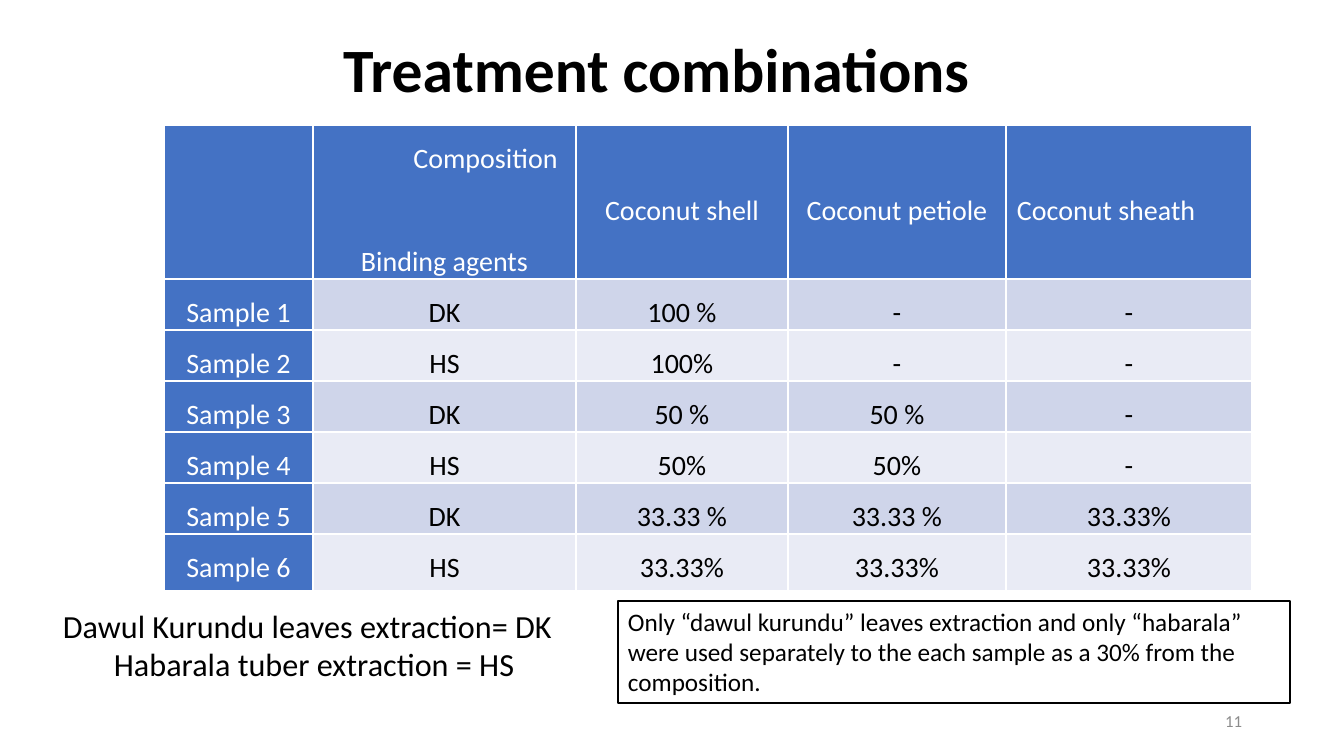
from dataclasses import dataclass

from lxml import etree
from pptx import Presentation
from pptx import util as u
from pptx.dml.color import RGBColor
from pptx.enum import shapes, text
from pptx.oxml.ns import qn

EMU_PER_PX = 914400 / 100.8
ALIGN = text.PP_ALIGN
ANCHOR = text.MSO_ANCHOR


def px(length):
    return u.Emu(round(length * EMU_PER_PX))


@dataclass(frozen=True)
class Theme:
    font: str = "Calibri"
    black: str = "000000"
    white: str = "FFFFFF"
    gray: str = "8C8C8C"
    header: str = "4472C4"
    bands: tuple = ("CFD5EA", "E9EBF5")
    title_size: int = 44
    legend_size: int = 23
    table_size: int = 20
    note_size: int = 18
    number_size: int = 12
    table_spacing: float = 1.5
    blank_line: float = 36.6


@dataclass
class Line:
    words: str
    align: int = ALIGN.LEFT
    indent: int = 0
    before: float = 0


class SlideBuilder:
    def __init__(self, slide, theme):
        self.slide = slide
        self.theme = theme

    def set_lines(self, frame, lines, size, color, bold=False, spacing=1.0):
        for index, line in enumerate(lines):
            paragraph = frame.paragraphs[0] if index == 0 else frame.add_paragraph()
            paragraph.text = line.words
            paragraph.alignment = line.align
            paragraph.line_spacing = spacing
            if line.indent:
                paragraph._p.get_or_add_pPr().set("marL", str(px(line.indent)))
            if line.before:
                paragraph.space_before = u.Pt(line.before)
            font = paragraph.font
            font.name = self.theme.font
            font.size = u.Pt(size)
            font.bold = bold
            font.color.rgb = RGBColor.from_string(color)

    def text_box(self, box, lines, size, color, anchor=ANCHOR.TOP, **style):
        shape = self.slide.shapes.add_textbox(*map(px, box))
        frame = shape.text_frame
        frame.word_wrap = True
        frame.vertical_anchor = anchor
        self.set_lines(frame, lines, size, color, **style)

    def note(self, box, lines):
        theme = self.theme
        shape = self.slide.shapes.add_shape(shapes.MSO_SHAPE.RECTANGLE, *map(px, box))
        shape.shadow.inherit = False
        shape.fill.solid()
        shape.fill.fore_color.rgb = RGBColor.from_string(theme.white)
        shape.line.color.rgb = RGBColor.from_string(theme.black)
        shape.line.width = u.Pt(1)
        shape.text_frame.word_wrap = True
        shape.text_frame.vertical_anchor = ANCHOR.TOP
        self.set_lines(shape.text_frame, lines, theme.note_size, theme.black)

    def borders(self, cell):
        properties = cell._tc.get_or_add_tcPr()
        for side in ("lnL", "lnR", "lnT", "lnB"):
            line = etree.SubElement(properties, qn(f"a:{side}"), w=str(u.Pt(1)))
            fill = etree.SubElement(line, qn("a:solidFill"))
            etree.SubElement(fill, qn("a:srgbClr"), val=self.theme.white)

    def cell(self, cell, lines, fill, color, anchor):
        self.borders(cell)
        cell.fill.solid()
        cell.fill.fore_color.rgb = RGBColor.from_string(fill)
        cell.margin_left = cell.margin_right = px(11)
        cell.margin_top = cell.margin_bottom = 0
        cell.vertical_anchor = anchor
        self.set_lines(cell.text_frame, lines, self.theme.table_size, color,
                       spacing=self.theme.table_spacing)

    def table(self, left, top, widths, heights, rows):
        theme = self.theme
        table = self.slide.shapes.add_table(
            len(rows), len(widths), px(left), px(top),
            px(sum(widths)), px(sum(heights))).table
        table.first_row = False
        table.horz_banding = False
        for column, width in zip(table.columns, widths):
            column.width = px(width)
        for row, height in zip(table.rows, heights):
            row.height = px(height)
        for r, row in enumerate(rows):
            for c, lines in enumerate(row):
                heading = r == 0 or c == 0
                self.cell(
                    table.cell(r, c), lines,
                    theme.header if heading else theme.bands[(r - 1) % 2],
                    theme.white if heading else theme.black,
                    ANCHOR.MIDDLE if r == 0 else ANCHOR.TOP)


def centered(words):
    return [Line(words, ALIGN.CENTER)]


def main():
    presentation = Presentation()
    presentation.slide_width = px(1344)
    presentation.slide_height = px(756)
    theme = Theme()
    slide = presentation.slides.add_slide(presentation.slide_layouts[6])
    builder = SlideBuilder(slide, theme)

    builder.text_box((77, 0, 1159, 146), centered("Treatment combinations"),
                     theme.title_size, theme.black, ANCHOR.MIDDLE,
                     bold=True, spacing=0.9)
    builder.text_box((950, 701, 302, 40), [Line("11", ALIGN.RIGHT)],
                     theme.number_size, theme.gray, ANCHOR.MIDDLE)

    header = [
        [],
        [Line("Composition", ALIGN.CENTER, indent=82),
         Line("Binding agents", ALIGN.CENTER, before=theme.blank_line)],
        centered("Coconut shell"),
        centered("Coconut petiole"),
        [Line("Coconut sheath")],
    ]
    samples = [
        ("DK", "100 %", "-", "-"),
        ("HS", "100%", "-", "-"),
        ("DK", "50 %", "50 %", "-"),
        ("HS", "50%", "50%", "-"),
        ("DK", "33.33 %", "33.33 %", "33.33%"),
        ("HS", "33.33%", "33.33%", "33.33%"),
    ]
    rows = [header] + [
        [centered(words) for words in (f"Sample {number}", *values)]
        for number, values in enumerate(samples, 1)]
    builder.table(164, 125, (149, 263, 212, 218, 246),
                  (154, *[51] * 5, 57), rows)

    builder.text_box((53, 601, 519, 90),
                     [Line("Dawul Kurundu leaves extraction= DK"),
                      Line("Habarala tuber extraction = HS", indent=51)],
                     theme.legend_size, theme.black)
    builder.note((618, 601, 672, 102), [Line(
        "Only “dawul kurundu” leaves extraction and only “habarala” were used "
        "separately to the each sample as a 30% from the composition.")])
    presentation.save("out.pptx")


if __name__ == "__main__":
    main()
